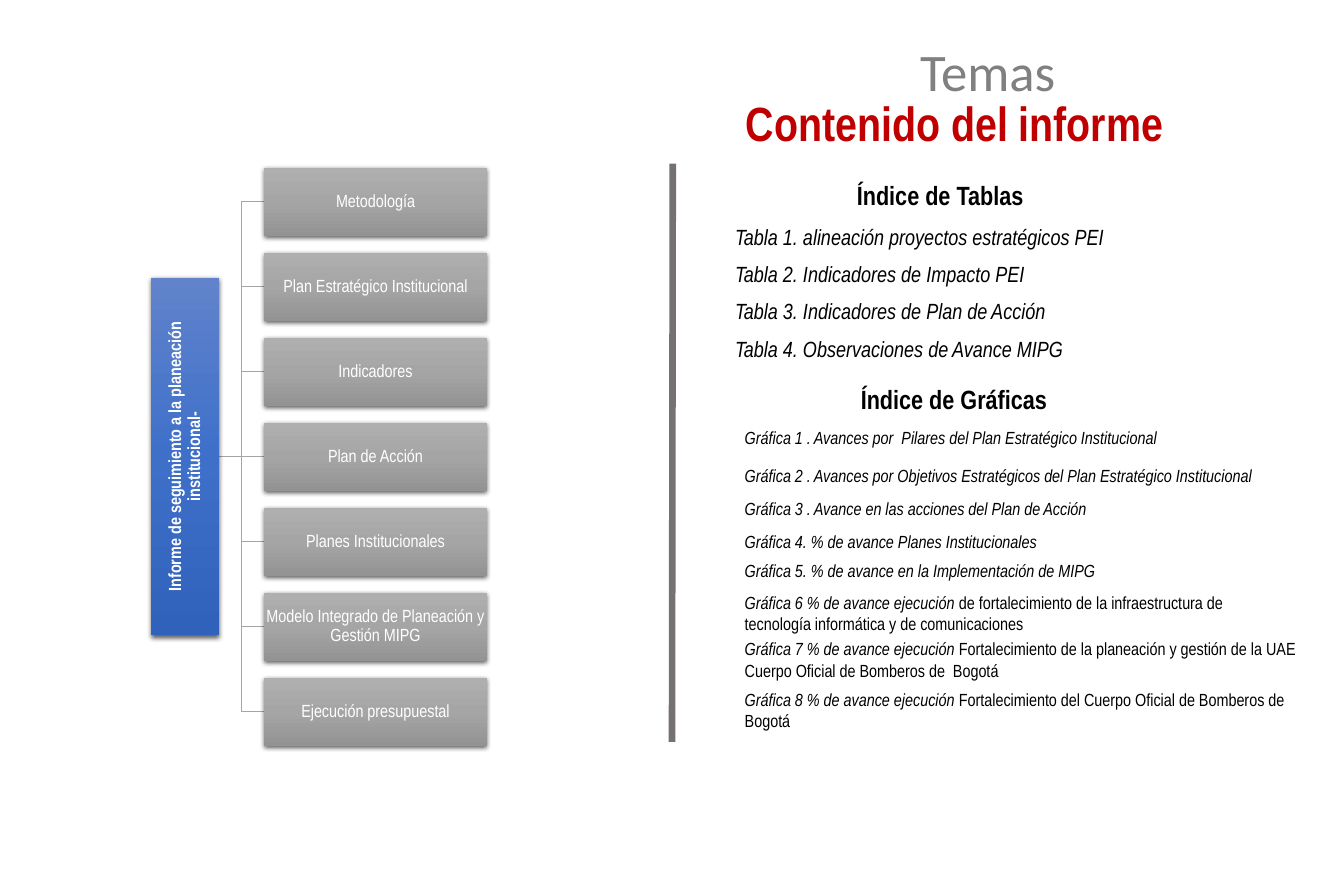
from lxml import etree
from pptx import Presentation
from pptx.dml.color import RGBColor
from pptx.enum.shapes import MSO_CONNECTOR, MSO_SHAPE
from pptx.enum.text import MSO_ANCHOR, MSO_AUTO_SIZE, PP_ALIGN
from pptx.oxml.ns import qn
from pptx.util import Inches, Pt

ELBOW, STRAIGHT = MSO_CONNECTOR.ELBOW, MSO_CONNECTOR.STRAIGHT
CENTER, MIDDLE, TOP = PP_ALIGN.CENTER, MSO_ANCHOR.MIDDLE, MSO_ANCHOR.TOP
RECTANGLE, NO_AUTOFIT = MSO_SHAPE.RECTANGLE, MSO_AUTO_SIZE.NONE

NARROW = "Arial Narrow"
BLACK, WHITE, RED = "000000", "FFFFFF", "C00000"
GRAY, LINK_GRAY, DIVIDER_GRAY = "808080", "A5A5A5", "767171"
ROOT_GRADIENT = ("6183CB", "3E70CA", "3062BB")
TOPIC_GRADIENT = ("AFAFAF", "A5A5A5", "939393")

REPORT = "Informe de seguimiento a la planeación institucional-"
TOPICS = [
    "Metodología",
    "Plan Estratégico Institucional",
    "Indicadores",
    "Plan de Acción",
    "Planes Institucionales",
    "Modelo Integrado de Planeación y Gestión MIPG",
    "Ejecución presupuestal",
]

# Each entry: space before in points, italic part, upright part
TABLE_ENTRIES = [
    (0, "Tabla 1. alineación proyectos estratégicos PEI", ""),
    (10, "Tabla 2. Indicadores de Impacto PEI", ""),
    (10, "Tabla 3. Indicadores de Plan de Acción", ""),
    (10, "Tabla 4. Observaciones de Avance MIPG", ""),
]
CHART_ENTRIES = [
    (0, "Gráfica 1 . Avances por  Pilares del Plan Estratégico Institucional", ""),
    (15, "Gráfica 2 . Avances por Objetivos Estratégicos del Plan Estratégico Institucional", ""),
    (11, "Gráfica 3 . Avance en las acciones del Plan de Acción", ""),
    (11, "Gráfica 4. % de avance Planes Institucionales", ""),
    (7, "Gráfica 5. % de avance en la Implementación de MIPG", ""),
    (10, "Gráfica 6 % de avance ejecución",
     " de fortalecimiento de la infraestructura de\n"
     "tecnología informática y de comunicaciones"),
    (4, "Gráfica 7 % de avance ejecución ",
     "Fortalecimiento de la planeación y gestión de la UAE "
     "Cuerpo Oficial de Bomberos de  Bogotá"),
    (8, "Gráfica 8 % de avance ejecución ",
     "Fortalecimiento del Cuerpo Oficial de Bomberos de Bogotá"),
]


def rgb(value):
    return RGBColor.from_string(value)


def set_font(paragraph, name, size, color, bold=False):
    font = paragraph.font
    font.name, font.size, font.bold = name, Pt(size), bold
    font.color.rgb = rgb(color)


def place(shape, left, top, width, height):
    shape.left, shape.top = Inches(left), Inches(top)
    shape.width, shape.height = Inches(width), Inches(height)


def add_label(slide, text, box, name, size, color, bold=False):
    label = slide.shapes.add_textbox(*map(Inches, box))
    paragraph = label.text_frame.paragraphs[0]
    paragraph.text = text
    set_font(paragraph, name, size, color, bold)


def add_line(slide, kind, start, end, color, width):
    line = slide.shapes.add_connector(kind, *map(Inches, start + end))
    line.line.color.rgb = rgb(color)
    line.line.width = Pt(width)
    etree.SubElement(line._element.spPr, qn("a:effectLst"))


def fill_gradient(shape, colors, angle):
    """Spread three colours evenly; the angle runs counter-clockwise."""
    shape.fill.gradient()
    shape.fill.gradient_angle = angle
    first, last = shape.fill.gradient_stops
    first.color.rgb, last.color.rgb = rgb(colors[0]), rgb(colors[2])
    first.position, last.position = 0, 1
    stops = shape._element.spPr.find(".//" + qn("a:gsLst"))
    middle = etree.Element(qn("a:gs"), pos="50000")
    etree.SubElement(middle, qn("a:srgbClr"), val=colors[1])
    stops.insert(1, middle)


def add_shadow(shape):
    shape.shadow.inherit = False
    effects = shape._element.spPr.find(qn("a:effectLst"))
    shadow = etree.SubElement(
        effects, qn("a:outerShdw"), blurRad=str(Pt(4.5)), dist=str(Pt(1.5)),
        dir="5400000", algn="ctr", rotWithShape="0")
    black = etree.SubElement(shadow, qn("a:srgbClr"), val=BLACK)
    etree.SubElement(black, qn("a:alpha"), val="63000")


def add_node(slide, text, box, colors, angle, bold=False):
    node = slide.shapes.add_shape(RECTANGLE, *map(Inches, box))
    fill_gradient(node, colors, angle)
    node.line.fill.background()
    add_shadow(node)
    frame = node.text_frame
    frame.word_wrap, frame.vertical_anchor = True, MIDDLE
    frame.margin_left = frame.margin_right = Inches(0.01)
    frame.margin_top = frame.margin_bottom = Inches(0.01)
    paragraph = frame.paragraphs[0]
    paragraph.text = text
    paragraph.alignment, paragraph.line_spacing = CENTER, 0.9
    set_font(paragraph, NARROW, 16, WHITE, bold)
    return node


def add_topic_tree(slide, left, top, width, height):
    thickness, root_length, topic_width = 0.86, 4.52, 2.82
    center_y = top + height / 2
    root_right = left + thickness
    topic_left = left + width - topic_width
    pitch = (height - thickness) / (len(TOPICS) - 1)
    tops = [top + i * pitch for i in range(len(TOPICS))]

    for i, topic_top in enumerate(tops):
        kind = STRAIGHT if i == len(TOPICS) // 2 else ELBOW
        add_line(slide, kind, (root_right, center_y),
                 (topic_left, topic_top + thickness / 2), LINK_GRAY, 1)

    root_box = (left + (thickness - root_length) / 2, center_y - thickness / 2,
                root_length, thickness)
    root = add_node(slide, REPORT, root_box, ROOT_GRADIENT, 180, bold=True)
    root.rotation = 270
    for topic, topic_top in zip(TOPICS, tops):
        add_node(slide, topic, (topic_left, topic_top, topic_width, thickness),
                 TOPIC_GRADIENT, 270)


def add_entry(paragraph, gap, italic_part, upright_part, size):
    properties = paragraph._p.get_or_add_pPr()
    properties.set("marL", "0")
    properties.set("indent", "0")
    paragraph.space_before = Pt(gap)
    etree.SubElement(properties, qn("a:buNone"))
    set_font(paragraph, NARROW, size, BLACK)
    lead = paragraph.add_run()
    lead.text, lead.font.italic = italic_part, True
    for i, line in enumerate(upright_part.split("\n") if upright_part else []):
        if i:
            paragraph.add_line_break()
        rest = paragraph.add_run()
        rest.text, rest.font.italic = line, False


def add_index(slide, body, heading, heading_left, entries, size, box):
    """Heading above a list; the box covers both."""
    left, top, width, height = box
    heading_height = 0.55
    add_label(slide, heading, (heading_left, top, 2.74, 0.5), NARROW, 24, BLACK, True)
    place(body, left, top + heading_height, width, height - heading_height)
    frame = body.text_frame
    frame.word_wrap, frame.auto_size, frame.vertical_anchor = True, NO_AUTOFIT, TOP
    for i, entry in enumerate(entries):
        paragraph = frame.add_paragraph() if i else frame.paragraphs[0]
        add_entry(paragraph, *entry, size)


def add_heading(slide, left, top, width, height):
    add_label(slide, "Temas", (left + 6.37, top, 2.54, 0.91), "Calibri", 48, GRAY)
    title = slide.shapes.title
    place(title, left, top + 0.68, width, height - 0.68)
    title.text_frame.auto_size = NO_AUTOFIT
    title.text_frame.vertical_anchor = MIDDLE
    paragraph = title.text_frame.paragraphs[0]
    paragraph.text = "Contenido del informe"
    paragraph.alignment = CENTER
    set_font(paragraph, NARROW, 43.7, RED, True)


def main():
    deck = Presentation()
    deck.slide_width, deck.slide_height = Inches(17), Inches(11)
    slide = deck.slides.add_slide(deck.slide_layouts.get_by_name("Two Content"))
    tables_body, charts_body = list(slide.placeholders)[1:3]
    add_heading(slide, 5.17, 0.44, 13.81, 1.54)
    add_topic_tree(slide, 1.91, 2.12, 4.25, 7.31)
    add_line(slide, STRAIGHT, (8.51, 2.07), (8.5, 9.38), DIVIDER_GRAY, 6)
    add_index(slide, tables_body, "Índice de Tablas", 10.74, TABLE_ENTRIES, 20,
              (9.2, 2.22, 6.66, 2.4))
    add_index(slide, charts_body, "Índice de Gráficas", 10.79, CHART_ENTRIES, 16,
              (9.32, 4.8, 7.42, 4.56))
    deck.save("out.pptx")


if __name__ == "__main__":
    main()
